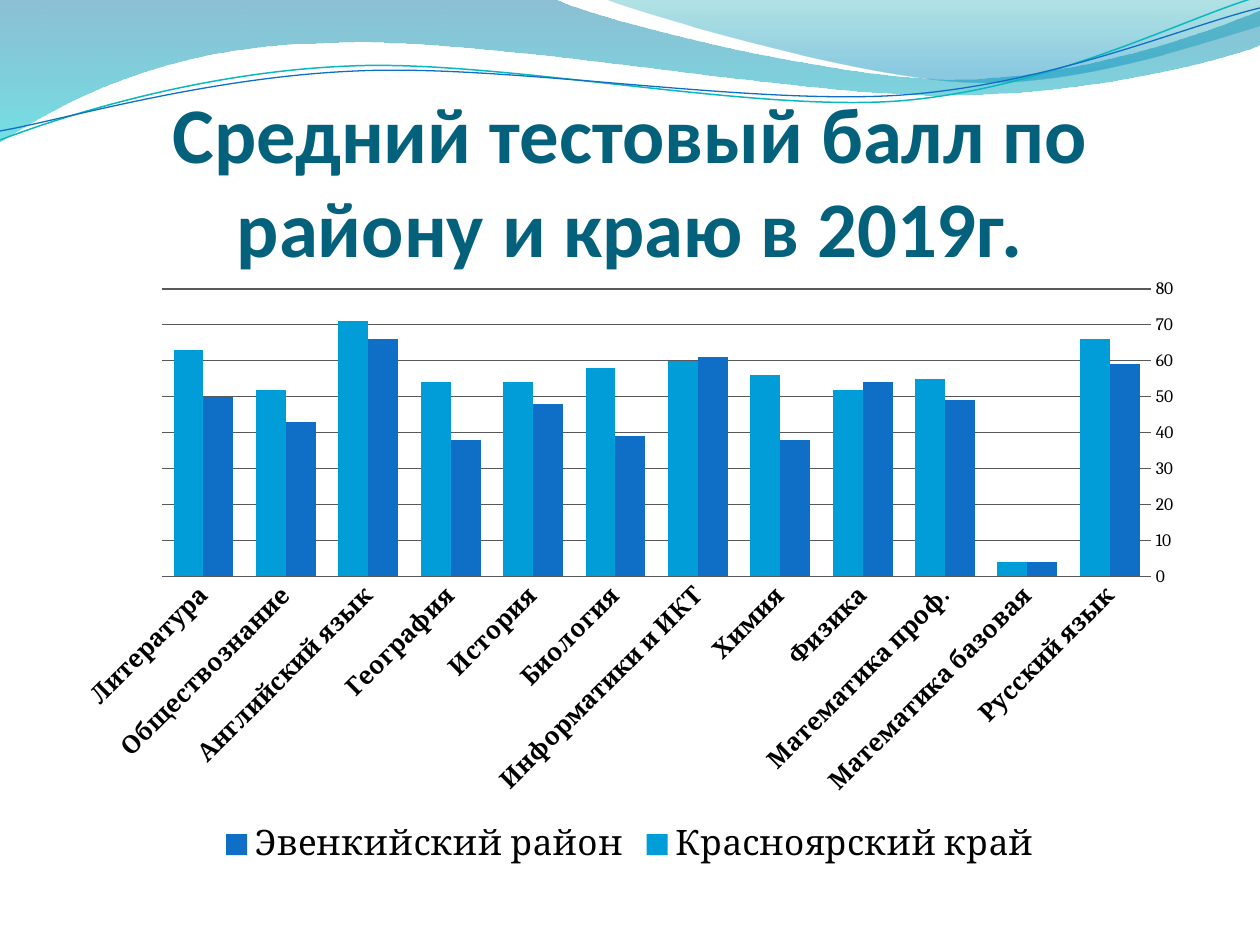
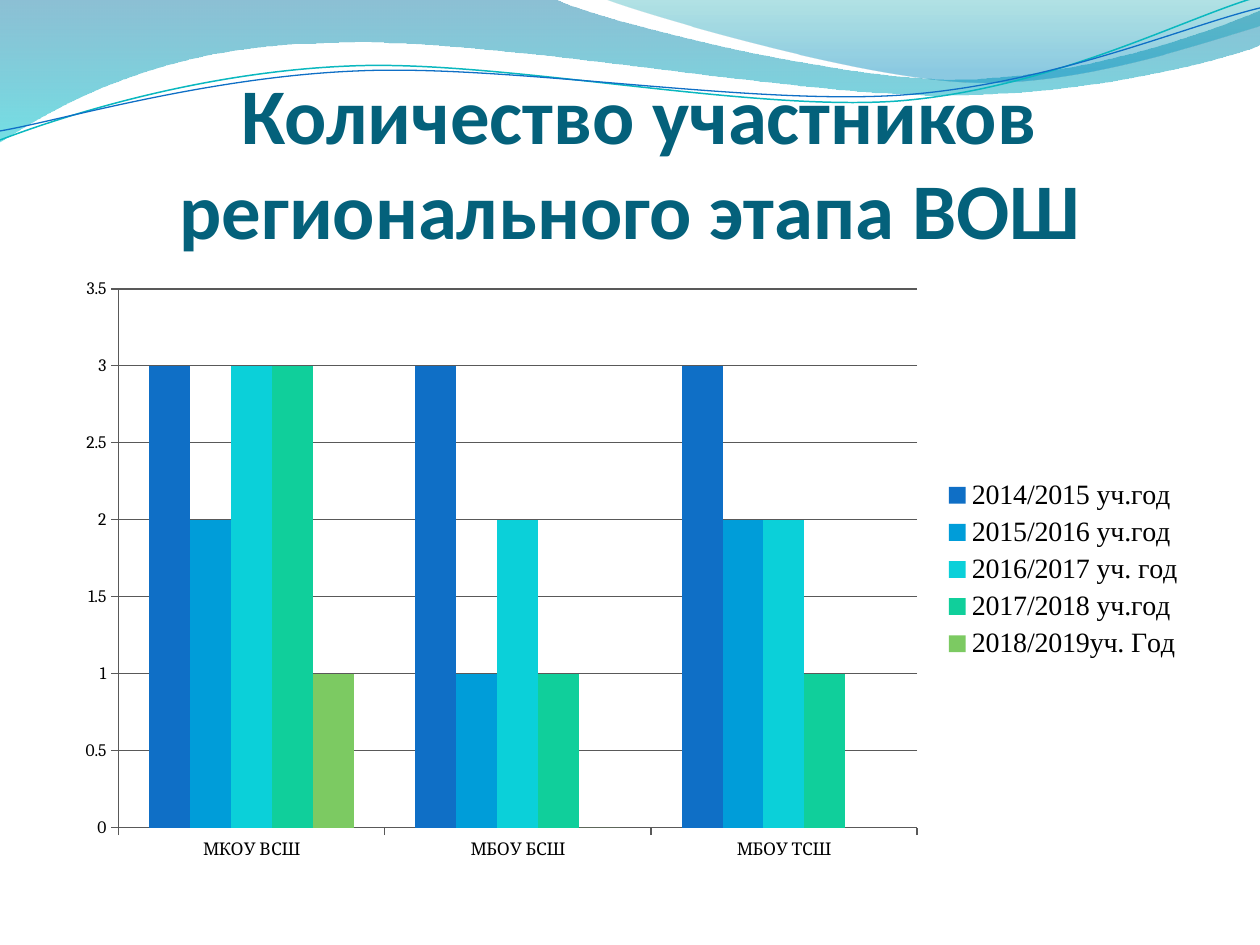
from dataclasses import dataclass

from lxml.etree import SubElement
from pptx import Presentation
from pptx.chart.data import CategoryChartData
from pptx.dml.color import RGBColor
from pptx.enum.chart import XL_CHART_TYPE, XL_LEGEND_POSITION, XL_TICK_MARK
from pptx.enum.text import MSO_ANCHOR, PP_ALIGN
from pptx.oxml.ns import qn
from pptx.util import Emu, Pt


@dataclass(frozen=True)
class Theme:
    title_color: str = "04617B"
    title_font: str = "Calibri"
    title_size: int = 45
    chart_font: str = "Cambria"
    legend_font: str = "Times New Roman"
    chart_size: int = 10
    text_color: str = "000000"
    grid_color: str = "595959"
    series_colors: tuple = ("0F6FC6", "009DD9", "0BD0D9", "10CF9B", "7CCA62")


THEME = Theme()
PX = 914400 / 126
PAGE_SIZE = (1260, 945)
TITLE_BOX = (63, 97, 1134, 158)
CHART_BOX = (63, 267, 1134, 605)

# Each step is one point (straight) or three points (Bézier curve).
# Gradient stops: position, colour, opacity in percent.
WAVES = [
    {"start": (0, 0),
     "steps": [[(554, -1)],
               [(600, 21), (837, 79), (955, 79)],
               [(1075, 79), (1207, 33), (1260, 11)],
               [(1261, 45)],
               [(1239, 55), (1096, 96), (940, 95)],
               [(784, 95), (481, 35), (324, 43)],
               [(163, 45), (58, 105), (-1, 142)]],
     "gradient": [(0, "0074A1", 45), (100, "00C6CF", 55)]},
    {"start": (604, -1),
     "steps": [[(641, 14), (859, 78), (969, 82)],
               [(1079, 87), (1211, 40), (1260, 26)],
               [(1260, 0)]],
     "gradient": [(0, "00A1A9", 30), (80, "008BBF", 45)]},
    {"start": (0, 140),
     "steps": [[(60, 117), (199, 72), (349, 66)],
               [(498, 59), (747, 112), (898, 101)],
               [(1050, 89), (1182, 19), (1257, -3)]],
     "line": ("0AB8BF", 0.85)},
    {"start": (0, 131),
     "steps": [[(59, 121), (207, 77), (357, 71)],
               [(508, 64), (752, 106), (903, 95)],
               [(1053, 84), (1185, 26), (1260, 8)]],
     "line": ("0F6FC6", 0.75)},
]

SLIDES = [
    {"title": "Средний тестовый балл по району и краю в 2019г.",
     "anchor": MSO_ANCHOR.MIDDLE,
     "categories": ["Русский язык", "Математика базовая", "Математика проф.",
                    "Физика", "Химия", "Информатики и ИКТ", "Биология",
                    "История", "География", "Английский язык",
                    "Обществознание", "Литература"],
     "series": {
         "Эвенкийский район": [59, 4, 49, 54, 38, 61, 39, 48, 38, 66, 43, 50],
         "Красноярский край": [66, 4, 55, 52, 56, 60, 58, 54, 54, 71, 52, 63]},
     "gap": 75,
     "tick": XL_TICK_MARK.NONE,
     "reversed": True,
     "legend": (XL_LEGEND_POSITION.BOTTOM, 20, THEME.chart_font)},
    {"title": " Количество участников регионального этапа ВОШ",
     "anchor": MSO_ANCHOR.BOTTOM,
     "categories": ["МКОУ ВСШ", "МБОУ БСШ", "МБОУ ТСШ"],
     "series": {
         "2014/2015 уч.год": [3, 3, 3],
         "2015/2016 уч.год": [2, 1, 2],
         "2016/2017 уч. год": [3, 2, 2],
         "2017/2018 уч.год": [3, 1, 1],
         "2018/2019уч. Год": [1, 0, None]},
     "gap": 150,
     "tick": XL_TICK_MARK.OUTSIDE,
     "reversed": False,
     "legend": (XL_LEGEND_POSITION.RIGHT, 16, THEME.legend_font)},
]


def px(*lengths):
    return [Emu(round(length * PX)) for length in lengths]


def rgb(color):
    return RGBColor.from_string(color)


def set_font(font, size, name, color=THEME.text_color, bold=False):
    font.size, font.name, font.bold = Pt(size), name, bold
    font.color.rgb = rgb(color)


def set_line(line, color, width=0.75):
    line.color.rgb = rgb(color)
    line.width = Pt(width)


def bend(shape, steps):
    """Join the three straight segments of each curved step into one Bézier."""
    outline = next(shape._element.iter(qn("a:path")))
    segments = iter(outline.findall(qn("a:lnTo")))
    for step in steps:
        parts = [next(segments) for _ in step]
        if len(step) == 3:
            curve = SubElement(outline, qn("a:cubicBezTo"))
            parts[0].addprevious(curve)
            for part in parts:
                curve.append(part[0])
                outline.remove(part)


def fill_gradient(shape, stops):
    """Fill from top to bottom with partly transparent colours."""
    shape.fill.gradient()
    shape.fill.gradient_angle = 270
    for stop, (position, color, _) in zip(shape.fill.gradient_stops, stops):
        stop.position = position / 100
        stop.color.rgb = rgb(color)
    colors = shape._element.spPr.iter(qn("a:srgbClr"))
    for element, (_, _, opacity) in zip(list(colors), stops):
        SubElement(element, qn("a:alpha")).set("val", str(opacity * 1000))


def add_wave(page, start, steps, gradient=None, line=None):
    builder = page.shapes.build_freeform(*start, scale=PX)
    builder.add_line_segments([point for step in steps for point in step],
                              close=gradient is not None)
    wave = builder.convert_to_shape()
    bend(wave, steps)
    wave.shadow.inherit = False
    if gradient:
        fill_gradient(wave, gradient)
        wave.line.fill.background()
    else:
        wave.fill.background()
        set_line(wave.line, *line)


def add_text(page, text, frame, *, anchor, align=PP_ALIGN.CENTER, **font):
    box = page.shapes.add_textbox(*px(*frame))
    body = box.text_frame
    body.word_wrap = True
    body.vertical_anchor = anchor
    body.margin_left, body.margin_top, body.margin_right, body.margin_bottom = px(0, 6, 0, 0)
    para = body.paragraphs[0]
    para.alignment = align
    span = para.add_run()
    span.text = text
    set_font(span.font, **font)


def format_axes(chart, tick, is_reversed):
    category_axis, value_axis = chart.category_axis, chart.value_axis
    for axis in (category_axis, value_axis):
        axis.major_tick_mark = tick
        axis.minor_tick_mark = XL_TICK_MARK.NONE
        set_line(axis.format.line, THEME.grid_color)
        set_font(axis.tick_labels.font, THEME.chart_size, THEME.chart_font)
    category_axis.has_major_gridlines = False
    value_axis.has_major_gridlines = True
    set_line(value_axis.major_gridlines.format.line, THEME.grid_color)
    if is_reversed:
        category_axis.reverse_order = True
        set_font(category_axis.tick_labels.font, 14, THEME.chart_font, bold=True)
        value_axis.format.line.fill.background()


def add_column_chart(page, content):
    data = CategoryChartData()
    data.categories = content["categories"]
    for name, values in content["series"].items():
        data.add_series(name, values)
    chart = page.shapes.add_chart(XL_CHART_TYPE.COLUMN_CLUSTERED, *px(*CHART_BOX), data).chart
    chart.has_title = False
    set_font(chart.font, THEME.chart_size, THEME.chart_font)

    plot = chart.plots[0]
    plot.vary_by_categories = False
    plot.gap_width = content["gap"]
    for series, color in zip(plot.series, THEME.series_colors):
        series.format.fill.solid()
        series.format.fill.fore_color.rgb = rgb(color)
    format_axes(chart, content["tick"], content["reversed"])

    position, size, font = content["legend"]
    chart.has_legend = True
    chart.legend.position = position
    chart.legend.include_in_layout = False
    set_font(chart.legend.font, size, font)


def main():
    deck = Presentation()
    deck.slide_width, deck.slide_height = px(*PAGE_SIZE)
    for content in SLIDES:
        page = deck.slides.add_slide(deck.slide_layouts[6])
        for wave in WAVES:
            add_wave(page, **wave)
        add_text(page, content["title"], TITLE_BOX, anchor=content["anchor"],
                 size=THEME.title_size, name=THEME.title_font,
                 color=THEME.title_color, bold=True)
        add_column_chart(page, content)
    deck.save("out.pptx")


if __name__ == "__main__":
    main()
